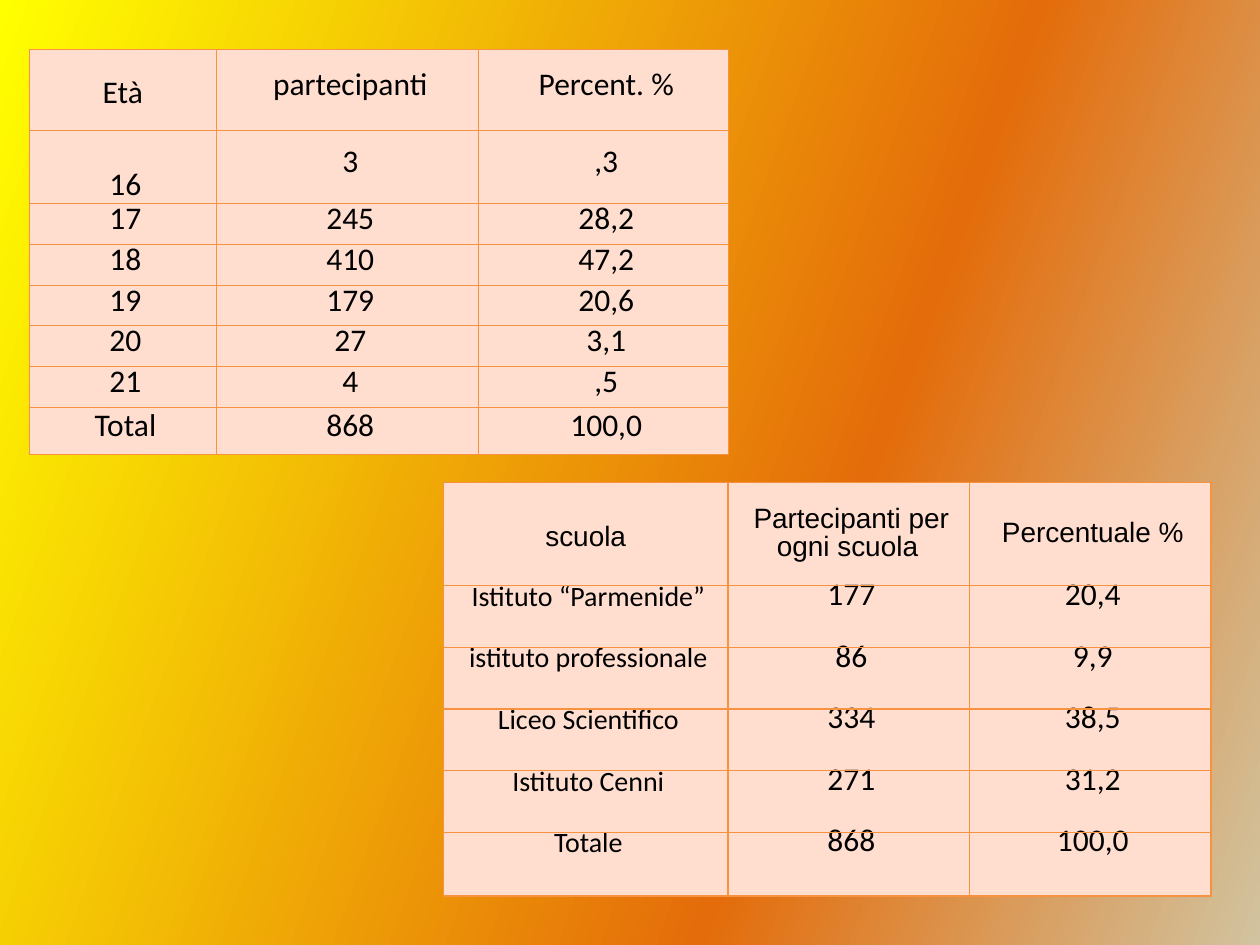
import lxml.etree
import pptx
import pptx.dml.color
import pptx.enum.text
import pptx.oxml
import pptx.oxml.ns
import pptx.util

Pt = pptx.util.Pt
ANCHOR = pptx.enum.text.MSO_ANCHOR

COLORS = {
    "yellow": "FFFF00",
    "orange": "E46C0A",
    "sand": "D1C39F",
    "cell": "FFDED0",
    "border": "F69240",
    "text": "000000",
}

AGE_ROWS = [
    ("Età", "partecipanti", "Percent. %"),
    ("16", "3", ",3"),
    ("17", "245", "28,2"),
    ("18", "410", "47,2"),
    ("19", "179", "20,6"),
    ("20", "27", "3,1"),
    ("21", "4", ",5"),
    ("Total", "868", "100,0"),
]
SCHOOL_ROWS = [
    ("scuola", "Partecipanti per ogni scuola ", "Percentuale %"),
    ("Istituto “Parmenide”", "177", "20,4"),
    ("istituto professionale", "86", "9,9"),
    ("Liceo Scientifico", "334", "38,5"),
    ("Istituto Cenni", "271", "31,2"),
    ("Totale", "868", "100,0"),
]


def rgb(name):
    return pptx.dml.color.RGBColor.from_string(COLORS[name])


def set_gradient_background(page, stops, angle):
    """Fill the page with (percent, color name) stops, angle in clockwise degrees."""
    fill = page.background.fill
    fill.gradient()
    fill.gradient_angle = 360 - angle
    stop_list = page.background._cSld.find(".//" + pptx.oxml.ns.qn("a:gsLst"))
    for stop in list(stop_list):
        stop_list.remove(stop)
    for percent, name in stops:
        stop = lxml.etree.SubElement(
            stop_list, pptx.oxml.ns.qn("a:gs"), pos=str(percent * 1000))
        lxml.etree.SubElement(
            stop, pptx.oxml.ns.qn("a:srgbClr"), val=COLORS[name])


def set_borders(cell):
    properties = cell._tc.get_or_add_tcPr()
    for position, side in enumerate(("lnL", "lnR", "lnT", "lnB")):
        line = pptx.oxml.parse_xml(
            f'<a:{side} {pptx.oxml.ns.nsdecls("a")} w="{Pt(0.75)}">'
            f'<a:solidFill><a:srgbClr val="{COLORS["border"]}"/></a:solidFill>'
            f'</a:{side}>')
        properties.insert(position, line)


def style_cell(cell, text, font, size, anchor, is_corner):
    cell.text_frame.text = text
    cell.vertical_anchor = anchor
    cell.margin_left = cell.margin_right = cell.margin_top = cell.margin_bottom = 0
    cell.fill.solid()
    cell.fill.fore_color.rgb = rgb("cell")
    set_borders(cell)
    para = cell.text_frame.paragraphs[0]
    para.alignment = pptx.enum.text.PP_ALIGN.CENTER
    para.line_spacing = 1.15 if is_corner else Pt(16)
    para.space_after = Pt(10)
    if not is_corner:
        para._p.get_or_add_pPr().set("marL", str(Pt(3)))
    span = para.runs[0]
    span.font.name = font
    span.font.size = Pt(size)
    span.font.color.rgb = rgb("text")


def add_data_table(page, left, top, widths, heights, rows, cell_style):
    """Add a table; cell_style(row, column) gives font, size and anchor."""
    frame = page.shapes.add_table(
        len(rows), len(widths), Pt(left), Pt(top), Pt(sum(widths)), Pt(sum(heights)))
    table = frame.table
    table.first_row = False
    table.horz_banding = False
    for column, width in zip(table.columns, widths):
        column.width = Pt(width)
    for row, height in zip(table.rows, heights):
        row.height = Pt(height)
    for i, texts in enumerate(rows):
        for j, text in enumerate(texts):
            style_cell(table.cell(i, j), text, *cell_style(i, j), i == j == 0)
    return table


def age_style(row, column):
    return "Calibri", 18, ANCHOR.MIDDLE


def school_style(row, column):
    if row == 0:
        return "Arial", 16, ANCHOR.MIDDLE
    return "Calibri", 16 if column == 0 else 18, ANCHOR.TOP


def main():
    deck = pptx.Presentation()
    deck.slide_width = Pt(720)
    deck.slide_height = Pt(540)
    page = deck.slides.add_slide(deck.slide_layouts[6])
    set_gradient_background(
        page, [(0, "yellow"), (65, "orange"), (100, "sand")], angle=20)

    add_data_table(
        page, 253.4, 275.8, [162.6, 138, 138], [59] + [35.2] * 4 + [36.5],
        SCHOOL_ROWS, school_style)
    ages = add_data_table(
        page, 16.7, 28.2, [107, 150, 142.6], [46.2, 42] + [23.3] * 5 + [26.8],
        AGE_ROWS, age_style)
    ages.cell(1, 0).margin_top = Pt(26)

    deck.save("out.pptx")


if __name__ == "__main__":
    main()
